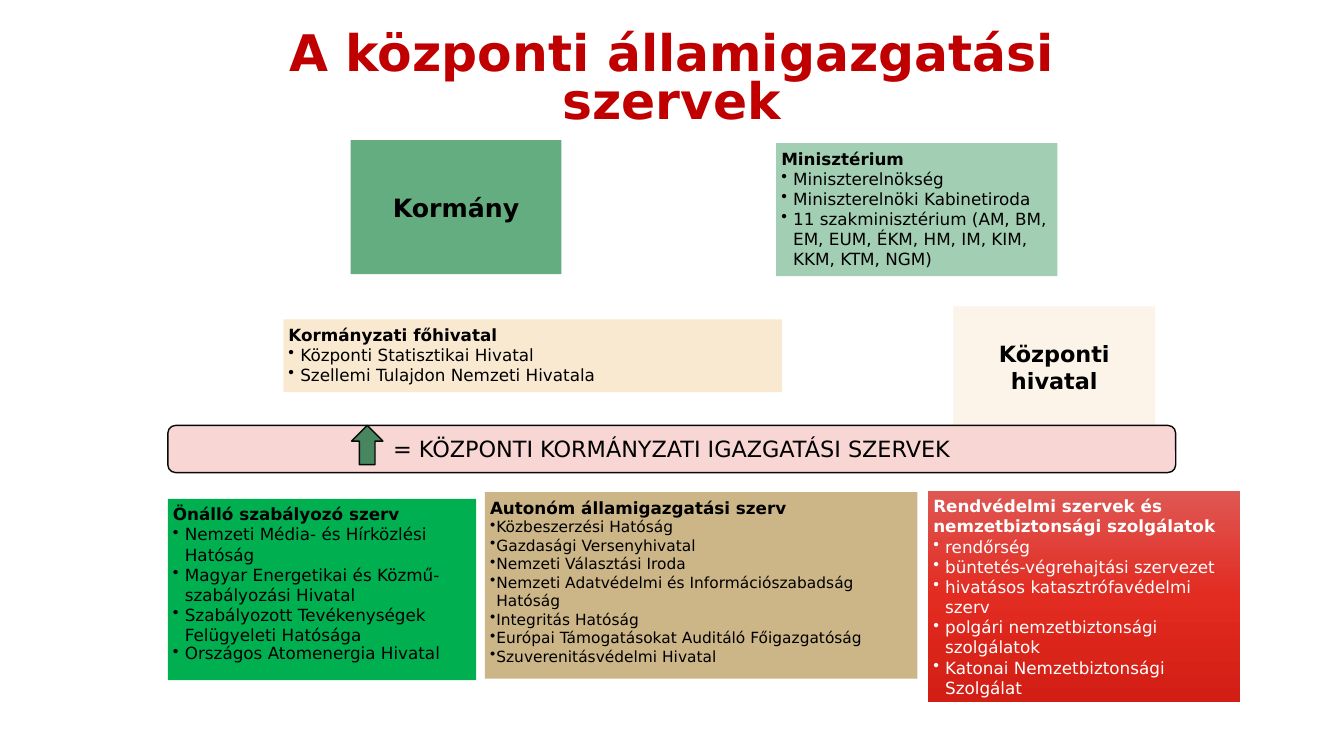
from copy import deepcopy
from lxml.etree import SubElement
from pptx import Presentation
from pptx.dml.color import RGBColor
from pptx.enum.shapes import MSO_SHAPE
from pptx.enum.text import MSO_ANCHOR, MSO_AUTO_SIZE, PP_ALIGN
from pptx.oxml.ns import qn
from pptx.util import Cm, Pt

COLORS = {
    "title": "C00000", "dark": "000000", "light": "FFFFFF", "outline": "090909",
    "government": "64AD80", "ministry": "A2CEB3", "main_office": "F9E9D1",
    "central_office": "FCF4E8", "regulator": "00B050", "autonomous": "CCB586",
    "summary": "F7D6D4", "arrow": "47865F",
}
POLICE_STOPS = [(0, "DF5753"), (0.5, "E22B21"), (1, "D21E14")]


class OrganisationSlide:
    """Hold the style and the page, and draw each kind of element."""

    font = "DejaVu Sans"

    def __init__(self, deck):
        """Add a title-only page to the deck."""
        self.page = deck.slides.add_slide(deck.slide_layouts[5])

    def style(self, para, size, color="dark", bold=False):
        """Format every span of a paragraph."""
        for span in para.runs:
            span.font.name = self.font
            span.font.size = Pt(size)
            span.font.bold = bold
            span.font.color.rgb = RGBColor.from_string(COLORS[color])

    def title(self, text, place):
        """Move, fill and format the title placeholder."""
        title = self.page.shapes.title
        title.left, title.top, title.width, title.height = map(Cm, place)
        frame = title.text_frame
        frame.text = text
        frame.auto_size = MSO_AUTO_SIZE.NONE
        frame.vertical_anchor = MSO_ANCHOR.MIDDLE
        para = frame.paragraphs[0]
        para.alignment = PP_ALIGN.CENTER
        para.line_spacing = Pt(34)
        self.style(para, 36, "title", True)

    def shape(self, place, color, kind=MSO_SHAPE.RECTANGLE, outlined=False):
        """Add a flat shape, with or without a thin outline."""
        box = self.page.shapes.add_shape(kind, *map(Cm, place))
        box.shadow.inherit = False
        box.fill.solid()
        box.fill.fore_color.rgb = RGBColor.from_string(COLORS[color])
        if outlined:
            box.line.color.rgb = RGBColor.from_string(COLORS["outline"])
            box.line.width = Pt(1)
        else:
            box.line.fill.background()
        return box

    def gradient(self, box, stops):
        """Fill a box with three colours from top to bottom."""
        box.fill.gradient()
        box.fill.gradient_angle = 270
        stop_list = box.fill._xPr.find(qn("a:gradFill")).find(qn("a:gsLst"))
        stop_list.append(deepcopy(stop_list[0]))
        for stop, (position, color) in zip(box.fill.gradient_stops, stops):
            stop.position = position
            stop.color.rgb = RGBColor.from_string(color)

    def inset(self, frame, margin):
        """Give a text frame equal margins and wrapping."""
        frame.word_wrap = True
        frame.margin_left = frame.margin_right = Cm(margin)
        frame.margin_top = frame.margin_bottom = Cm(margin)

    def label(self, box, text, size, bold=True):
        """Write one centred line in a box."""
        frame = box.text_frame
        self.inset(frame, 0.18)
        frame.vertical_anchor = MSO_ANCHOR.MIDDLE
        frame.text = text
        frame.paragraphs[0].alignment = PP_ALIGN.CENTER
        self.style(frame.paragraphs[0], size, bold=bold)

    def bullets(self, box, heading, items, size=12, indent=0.3, color="dark"):
        """Write a bold heading and a bulleted list in a box."""
        frame = box.text_frame
        self.inset(frame, 0.13)
        frame.vertical_anchor = MSO_ANCHOR.TOP
        frame.text = "\n".join([heading, *items])
        for para in frame.paragraphs:
            para.alignment = PP_ALIGN.LEFT
            self.style(para, size, color)
        self.style(frame.paragraphs[0], 12, color, True)
        for para in frame.paragraphs[1:]:
            properties = para._p.get_or_add_pPr()
            properties.set("marL", str(Cm(indent)))
            properties.set("indent", str(-Cm(indent)))
            SubElement(properties, qn("a:buChar")).set("char", "•")


def main():
    """Build and save the slide."""
    deck = Presentation()
    deck.slide_width, deck.slide_height = Cm(33.87), Cm(19.05)
    slide = OrganisationSlide(deck)
    slide.title("A központi államigazgatási\vszervek", (4.23, 0.2, 25.4, 3.73))

    slide.label(slide.shape((8.84, 3.53, 5.31, 3.38), "government"), "Kormány", 18)
    slide.bullets(slide.shape((19.56, 3.61, 7.09, 3.35), "ministry"), "Minisztérium", [
        "Miniszterelnökség",
        "Miniszterelnöki Kabinetiroda",
        "11 szakminisztérium (AM, BM, EM, EUM, ÉKM, HM, IM, KIM, KKM, KTM, NGM)",
    ])

    regulator = slide.shape((4.23, 12.57, 7.77, 4.57), "regulator")
    slide.bullets(regulator, "Önálló szabályozó szerv", [
        "Nemzeti Média- és Hírközlési Hatóság",
        "Magyar Energetikai és Közmű-szabályozási Hivatal",
        "Szabályozott Tevékenységek Felügyeleti Hatósága",
        "Országos Atomenergia Hivatal",
    ])
    regulator.text_frame.paragraphs[-1].line_spacing = 0.9

    autonomous = slide.shape((12.22, 12.4, 10.9, 4.7), "autonomous")
    slide.bullets(autonomous, "Autonóm államigazgatási szerv", [
        "Közbeszerzési Hatóság",
        "Gazdasági Versenyhivatal",
        "Nemzeti Választási Iroda",
        "Nemzeti Adatvédelmi és Információszabadság Hatóság",
        "Integritás Hatóság",
        "Európai Támogatásokat Auditáló Főigazgatóság",
        "Szuverenitásvédelmi Hivatal",
    ], size=11, indent=0.16)

    main_office = slide.shape((7.14, 8.05, 12.57, 1.83), "main_office")
    slide.bullets(main_office, "Kormányzati főhivatal", [
        "Központi Statisztikai Hivatal",
        "Szellemi Tulajdon Nemzeti Hivatala",
    ])
    central_office = slide.shape((24.03, 7.72, 5.08, 3.05), "central_office")
    slide.label(central_office, "Központi hivatal", 16)

    police = slide.shape((23.39, 12.37, 7.87, 5.31), "title")
    slide.gradient(police, POLICE_STOPS)
    slide.bullets(police, "Rendvédelmi szervek és nemzetbiztonsági szolgálatok", [
        "rendőrség",
        "büntetés-végrehajtási szervezet",
        "hivatásos katasztrófavédelmi szerv",
        "polgári nemzetbiztonsági szolgálatok",
        "Katonai Nemzetbiztonsági Szolgálat",
    ], color="light")

    summary = slide.shape((4.23, 10.72, 25.4, 1.19), "summary",
                          MSO_SHAPE.ROUNDED_RECTANGLE, True)
    slide.label(summary, "= KÖZPONTI KORMÁNYZATI IGAZGATÁSI SZERVEK", 16, False)
    slide.shape((8.86, 10.72, 0.79, 0.99), "arrow", MSO_SHAPE.UP_ARROW, True)
    deck.save("out.pptx")


if __name__ == "__main__":
    main()
